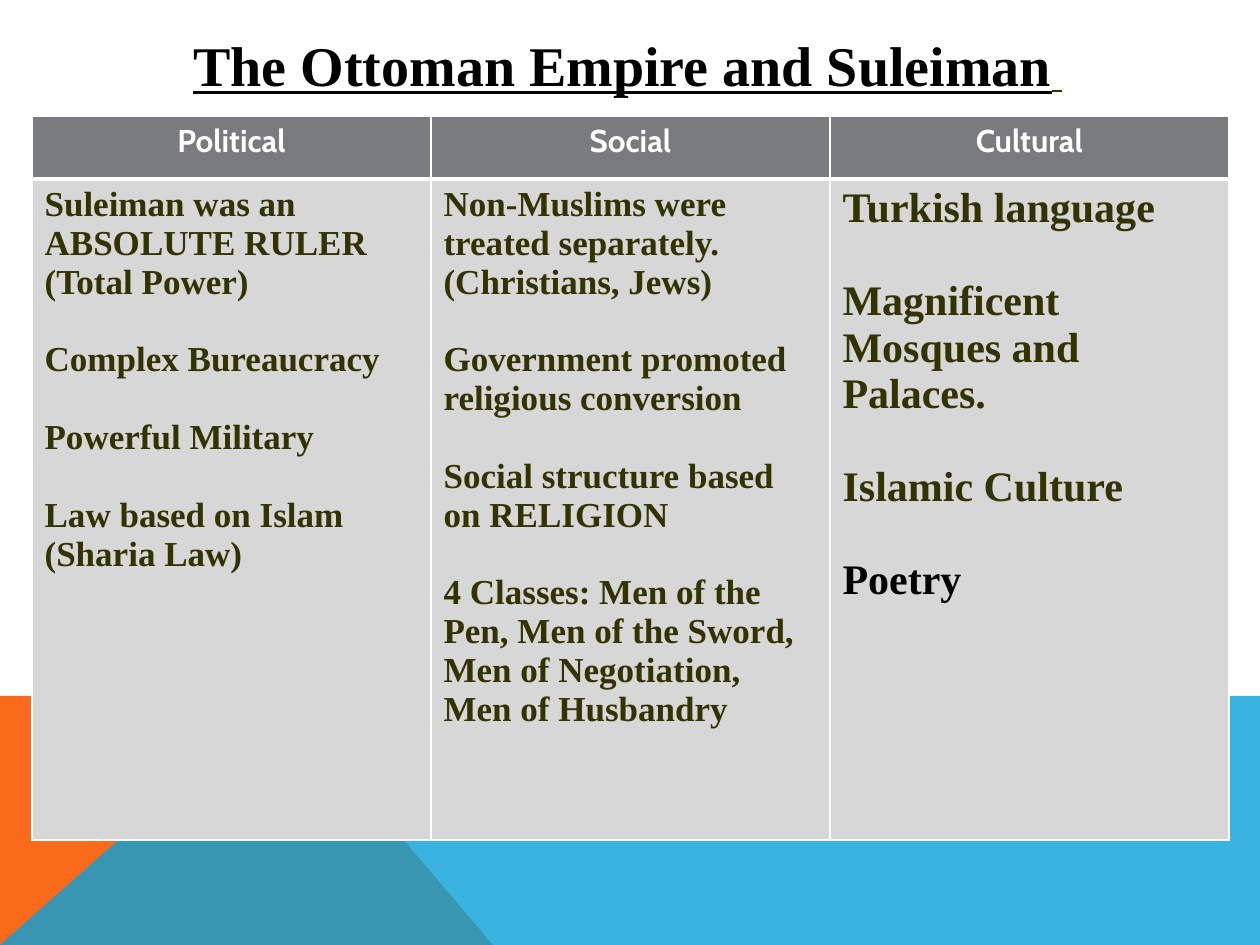
from dataclasses import dataclass

from lxml import etree
from pptx import Presentation
from pptx import util as u
from pptx.dml.color import RGBColor
from pptx.enum import text
from pptx.oxml.ns import qn

TITLE = "The Ottoman Empire and Suleiman"
COLUMNS = [
    ("Political", 20, [
        ["Suleiman was an ABSOLUTE RULER", "(Total Power)"],
        ["Complex Bureaucracy"],
        ["Powerful Military"],
        ["Law based on Islam (Sharia Law)"],
    ]),
    ("Social", 20, [
        ["Non-Muslims were treated separately. (Christians, Jews)"],
        ["Government promoted religious conversion"],
        ["Social structure based on RELIGION"],
        ["4 Classes: Men of the Pen, Men of the Sword, "
         "Men of Negotiation, Men of Husbandry"],
    ]),
    ("Cultural", 24, [
        ["Turkish language"],
        ["Magnificent Mosques and Palaces."],
        ["Islamic Culture"],
        ["Poetry"],
    ]),
]
BLACK_TEXT = {"Poetry"}


@dataclass(frozen=True)
class Theme:
    serif: str = "Times New Roman"
    sans: str = "Cabin"
    black: str = "000000"
    white: str = "FFFFFF"
    olive: str = "333300"
    header: str = "797B7E"
    body: str = "D7D7D8"
    orange: str = "F96A1B"
    blue: str = "08A1D9"
    title_size: int = 32
    title_end_size: int = 24
    header_size: int = 18
    line_height: float = 1.11


T = Theme()
SCALE = 914400 / 126
WIDTH, HEIGHT = 1260, 945
TITLE_BOX = (0, -15, 1256, 158)
TABLE_LEFT, TABLE_TOP, COLUMN_WIDTH = 32, 116, 399
ROW_HEIGHTS = (63, 661)
BAND_TOP, BAND_PEAK, BAND_FOOT = 696, 281, 493


def px(n):
    return u.Emu(round(n * SCALE))


def write(p, words, size, color, font=T.serif, align=None, underline=None, before=0):
    p.alignment = align
    p.space_before = u.Pt(before)
    r = p.add_run()
    r.text = words
    f = r.font
    f.name, f.size, f.bold, f.underline = font, u.Pt(size), True, underline
    f.color.rgb = RGBColor.from_string(color)


def draw_band(s, points, color, alpha=100):
    builder = s.shapes.build_freeform(*points[0], scale=SCALE)
    builder.add_line_segments(points[1:], close=True)
    sp = builder.convert_to_shape()
    sp.shadow.inherit = False
    sp.line.fill.background()
    sp.fill.solid()
    sp.fill.fore_color.rgb = RGBColor.from_string(color)
    if alpha < 100:
        clr = sp.element.spPr.find(qn("a:solidFill")).find(qn("a:srgbClr"))
        etree.SubElement(clr, qn("a:alpha"), val=str(alpha * 1000))


def style_cell(cell, fill, top=1, bottom=1):
    pr = cell._tc.get_or_add_tcPr()
    for side, width in (("L", 1), ("R", 1), ("T", top), ("B", bottom)):
        ln = etree.SubElement(pr, qn(f"a:ln{side}"), w=str(u.Pt(width)))
        solid = etree.SubElement(ln, qn("a:solidFill"))
        etree.SubElement(solid, qn("a:srgbClr"), val=T.white)
    cell.fill.solid()
    cell.fill.fore_color.rgb = RGBColor.from_string(fill)


def fill_body(tf, blocks, size):
    gap = round(size * T.line_height, 1)
    items = [(words, gap if i and not j else 0)
             for i, block in enumerate(blocks) for j, words in enumerate(block)]
    for n, (words, before) in enumerate(items):
        p = tf.add_paragraph() if n else tf.paragraphs[0]
        color = T.black if words in BLACK_TEXT else T.olive
        write(p, words, size, color, before=before)


def add_title(s):
    tf = s.shapes.add_textbox(*map(px, TITLE_BOX)).text_frame
    tf.word_wrap = True
    tf.vertical_anchor = text.MSO_ANCHOR.MIDDLE
    p = tf.paragraphs[0]
    center = text.PP_ALIGN.CENTER
    write(p, TITLE, T.title_size, T.black, align=center, underline=True)
    write(p, " ", T.title_end_size, T.olive, align=center, underline=True)


def add_summary(s):
    table = s.shapes.add_table(
        len(ROW_HEIGHTS), len(COLUMNS), px(TABLE_LEFT), px(TABLE_TOP),
        px(COLUMN_WIDTH * len(COLUMNS)), px(sum(ROW_HEIGHTS))).table
    for row, height in zip(table.rows, ROW_HEIGHTS):
        row.height = px(height)
    for i, (heading, size, blocks) in enumerate(COLUMNS):
        table.columns[i].width = px(COLUMN_WIDTH)
        head, body = table.cell(0, i), table.cell(1, i)
        style_cell(head, T.header, bottom=3)
        style_cell(body, T.body, top=3)
        write(head.text_frame.paragraphs[0], heading, T.header_size, T.white,
              font=T.sans, align=text.PP_ALIGN.CENTER)
        fill_body(body.text_frame, blocks, size)


def main():
    prs = Presentation()
    prs.slide_width, prs.slide_height = px(WIDTH), px(HEIGHT)
    s = prs.slides.add_slide(prs.slide_layouts[6])
    draw_band(s, [(0, HEIGHT), (0, BAND_TOP), (BAND_PEAK, BAND_TOP),
                  (BAND_FOOT, HEIGHT)], T.orange)
    draw_band(s, [(0, HEIGHT), (BAND_PEAK, BAND_TOP), (WIDTH, BAND_TOP),
                  (WIDTH, HEIGHT)], T.blue, alpha=80)
    add_title(s)
    add_summary(s)
    prs.save("out.pptx")


if __name__ == "__main__":
    main()
